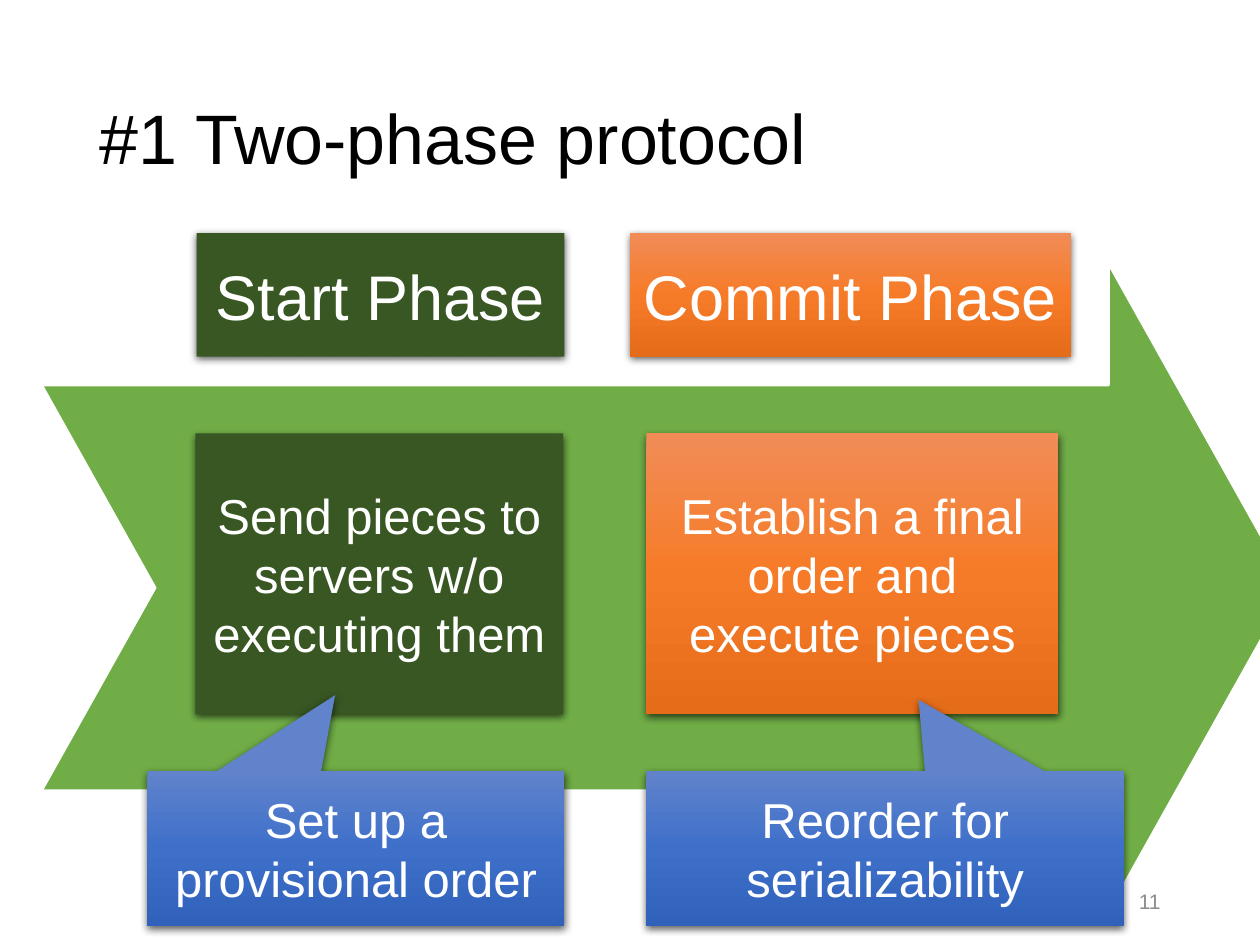
"""Build a slide showing the two phases of a protocol along a broad arrow."""
from copy import deepcopy

from lxml import etree
from pptx import Presentation, util as u
from pptx.dml.color import RGBColor
from pptx.enum import shapes, text
from pptx.oxml import ns

BLACK = RGBColor(0x00, 0x00, 0x00)
WHITE = RGBColor(0xFF, 0xFF, 0xFF)
GRAY = RGBColor(0x8C, 0x8C, 0x8C)
DARK_GREEN = RGBColor(0x38, 0x57, 0x23)
GREEN = RGBColor(0x70, 0xAD, 0x47)
ORANGES = [RGBColor(0xF1, 0x8C, 0x57), RGBColor(0xF6, 0x7B, 0x28), RGBColor(0xE5, 0x6C, 0x19)]
BLUES = [RGBColor(0x61, 0x83, 0xCB), RGBColor(0x3E, 0x70, 0xCA), RGBColor(0x30, 0x62, 0xBB)]

presentation = Presentation()
presentation.slide_width, presentation.slide_height = u.Inches(10), u.Inches(7.5)
COLUMN = presentation.slide_width / 100
ROW = presentation.slide_height / 75
slide = presentation.slides.add_slide(presentation.slide_layouts[6])


def write(shape, words, size, color, alignment):
    frame = shape.text_frame
    frame.word_wrap = True
    frame.vertical_anchor = text.MSO_ANCHOR.MIDDLE
    paragraph = frame.paragraphs[0]
    paragraph.text = words
    paragraph.alignment = alignment
    paragraph.font.color.rgb = color
    for name, value in {"name": "Arial", "size": u.Pt(size)}.items():
        setattr(paragraph.font, name, value)
    return paragraph


def add_block(kind, place, colors, adjustments=()):
    left, top, width, height = place
    shape = slide.shapes.add_shape(
        kind, int(left * COLUMN), int(top * ROW), int(width * COLUMN), int(height * ROW))
    for index, value in enumerate(adjustments):
        shape.adjustments[index] = value
    if len(colors) == 1:
        shape.fill.solid()
        shape.fill.fore_color.rgb = colors[0]
    else:
        shape.fill.gradient()
        shape.fill.gradient_angle = 270
        stops = shape._element.spPr.find(".//" + ns.qn("a:gsLst"))
        stops.insert(1, deepcopy(stops[0]))
        for stop, position, color in zip(shape.fill.gradient_stops, (0, 0.5, 1), colors):
            stop.position = position
            stop.color.rgb = color
    shape.line.fill.background()
    shape.shadow.inherit = False
    return shape


RECTANGLE = shapes.MSO_SHAPE.RECTANGLE
CALLOUT = shapes.MSO_SHAPE.RECTANGULAR_CALLOUT
HEADER_TOP, HEADER_HEIGHT = 18.5, 9.8
BODY_TOP, BODY_HEIGHT = 34.4, 22.3
NOTE_TOP, NOTE_HEIGHT = 61.2, 12.3

headers = [
    (RECTANGLE, (15.6, HEADER_TOP, 29.2, HEADER_HEIGHT), [DARK_GREEN], (), "Start Phase", 36),
    (RECTANGLE, (50, HEADER_TOP, 35, HEADER_HEIGHT), ORANGES, (), "Commit Phase", 36),
]
details = [
    (RECTANGLE, (15.5, BODY_TOP, 29.2, BODY_HEIGHT), [DARK_GREEN], (),
     "Send pieces to servers w/o executing them", 28),
    (RECTANGLE, (51.3, BODY_TOP, 32.7, BODY_HEIGHT), ORANGES, (),
     "Establish a final order and execute pieces", 28),
    (CALLOUT, (51.3, NOTE_TOP, 37.9, NOTE_HEIGHT), BLUES, (0.07, -0.96),
     "Reorder for serializability", 28),
    (CALLOUT, (11.7, NOTE_TOP, 33.1, NOTE_HEIGHT), BLUES, (-0.05, -0.99),
     "Set up a provisional order", 28),
]

title = slide.shapes.add_textbox(
    int(6.9 * COLUMN), int(4 * ROW), int(86.2 * COLUMN), int(14.5 * ROW))
write(title, "#1 Two-phase protocol", 40, BLACK, text.PP_ALIGN.LEFT).line_spacing = 0.9

for group in (headers, details):
    if group is details:
        arrow = add_block(shapes.MSO_SHAPE.NOTCHED_RIGHT_ARROW, (3.3, 20.9, 99.1, 51.5),
                          [GREEN], (0.625, 0.28))
        arrow.line.color.rgb = WHITE
        arrow.line.width = u.Pt(1.5)
    for kind, place, colors, adjustments, words, size in group:
        block = add_block(kind, place, colors, adjustments)
        effects = block._element.spPr.find(ns.qn("a:effectLst"))
        shadow = etree.SubElement(effects, ns.qn("a:outerShdw"), {
            "blurRad": str(u.Pt(4.5)), "dist": str(u.Pt(1.5)),
            "dir": "5400000", "algn": "ctr", "rotWithShape": "0"})
        shade = etree.SubElement(shadow, ns.qn("a:srgbClr"), val=str(BLACK))
        etree.SubElement(shade, ns.qn("a:alpha"), val="63000")
        write(block, words, size, WHITE, text.PP_ALIGN.CENTER)

number = slide.shapes.add_textbox(
    int(70.6 * COLUMN), int(69.5 * ROW), int(22.5 * COLUMN), int(4 * ROW))
write(number, "11", 12, GRAY, text.PP_ALIGN.RIGHT)

presentation.save("out.pptx")
